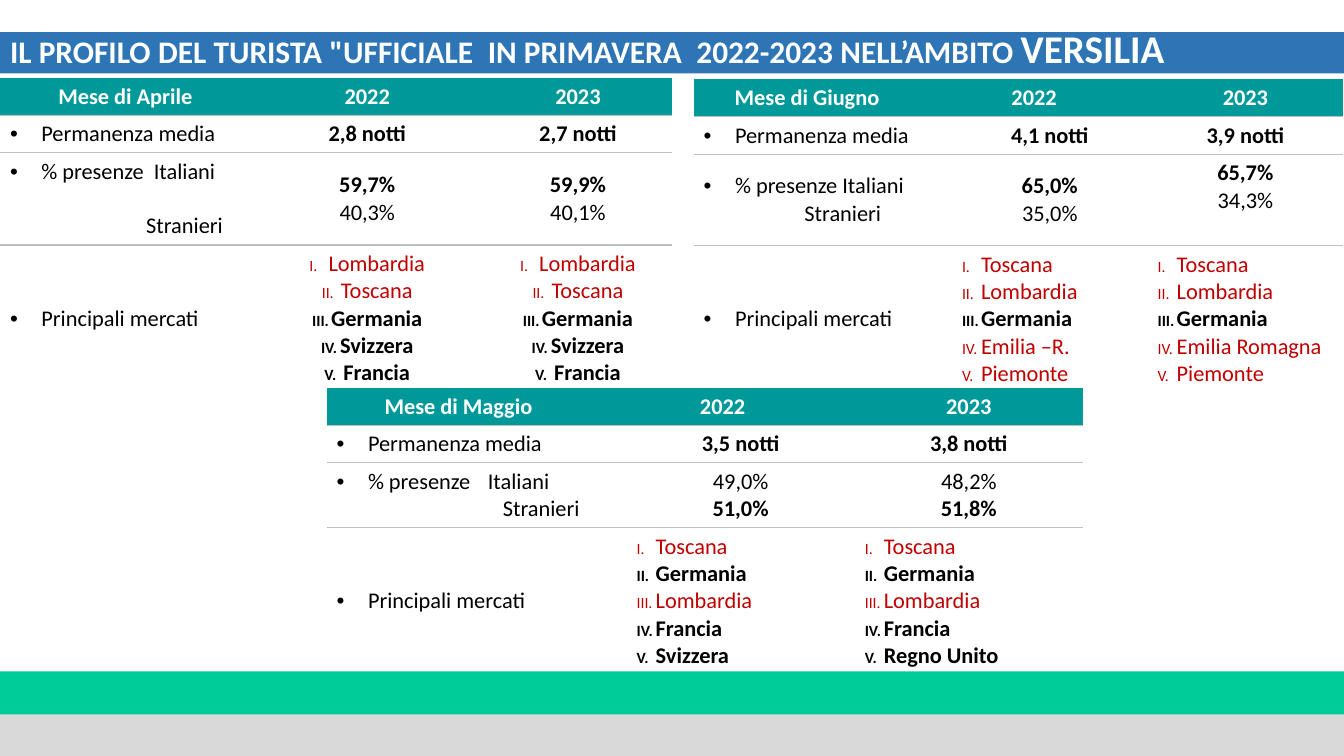
from lxml import etree
from pptx import Presentation
from pptx import util as u
from pptx.dml.color import RGBColor
from pptx.enum import shapes, text
from pptx.oxml import ns

WHITE = RGBColor(0xFF, 0xFF, 0xFF)
BLACK = RGBColor(0, 0, 0)
RED = RGBColor(0xC0, 0, 0)
TEAL = RGBColor(0, 0x99, 0x99)
GREEN = RGBColor(0, 0xCC, 0x99)
GREY = RGBColor(0xD9, 0xD9, 0xD9)
RULE = RGBColor(0xBF, 0xBF, 0xBF)
BLUE = RGBColor(0x2E, 0x75, 0xB6)
LEFT, MID = text.PP_ALIGN.LEFT, text.PP_ALIGN.CENTER
CENTRE, TOP = text.MSO_ANCHOR.MIDDLE, text.MSO_ANCHOR.TOP
PLAIN = "{2D5ABB26-0587-4C30-8999-92F81FD0307C}"

TITLE = "il profilo del turista \"ufficiale  in primavera  2022-2023 nell’ambito VERSILIA"
BANDS = [(16.92, 1.09, GREEN), (18.01, 1.04, GREY), (0.81, 1.04, BLUE)]
YEARS = ["2022", "2023"]
ABROAD = {"Germania", "Svizzera", "Francia", "Regno Unito"}
MONTHS = [
    dict(name="Aprile", at=(0, 1.96), cols=(6.32, 5.87, 4.75),
         rows=(0.93, 0.93, 2.28, 3.65), align=MID,
         label="% presenze  Italiani", indent=3.43, gap=19.5,
         anchors=(CENTRE, CENTRE), stays=("2,8", "2,7"),
         shares=(("59,7", "40,3"), ("59,9", "40,1")),
         markets=(("Lombardia", "Toscana", "Germania", "Svizzera", "Francia"),
                  ("Lombardia", "Toscana", "Germania", "Svizzera", "Francia"))),
    dict(name="Maggio", at=(8.23, 9.77), cols=(6.65, 0.91, 5.75, 5.75),
         rows=(0.93, 0.93, 1.63, 3.65), align=LEFT,
         label="% presenze \tItaliani", indent=4.19, gap=0,
         anchors=(CENTRE, CENTRE), stays=("3,5", "3,8"),
         shares=(("49,0", "51,0"), ("48,2", "51,8")),
         markets=(("Toscana", "Germania", "Lombardia", "Francia", "Svizzera"),
                  ("Toscana", "Germania", "Lombardia", "Francia", "Regno Unito"))),
    dict(name="Giugno", at=(17.48, 2), cols=(5.72, 0.79, 4.93, 4.93),
         rows=(0.93, 0.93, 2.3, 3.65), align=LEFT,
         label="% presenze Italiani", indent=2.54, gap=0,
         anchors=(CENTRE, TOP), stays=("4,1", "3,9"),
         shares=(("65,0", "35,0"), ("65,7", "34,3")),
         markets=(("Toscana", "Lombardia", "Germania", "Emilia –R.", "Piemonte"),
                  ("Toscana", "Lombardia", "Germania", "Emilia Romagna", "Piemonte"))),
]


def style(item, **vals):
    for key, val in vals.items():
        setattr(item, key, val)


def add(node, tag, **vals):
    return etree.SubElement(node, ns.qn(tag), vals)


def indent(para, left, hang=0):
    props = para._p.get_or_add_pPr()
    props.set("marL", str(u.Cm(left)))
    props.set("indent", str(-u.Cm(hang)))
    return props


def bullet(para, left, color, roman):
    props = indent(para, left, left)
    add(add(props, "a:buClr"), "a:srgbClr", val=str(color))
    if roman:
        add(props, "a:buSzPct", val="70000")
        add(props, "a:buFont", typeface="+mj-lt")
        add(props, "a:buAutoNum", type="romanUcPeriod")
    else:
        add(props, "a:buFont", typeface="Arial")
        add(props, "a:buChar", char="•")


def put(cell, lines, align=LEFT, color=BLACK, anchor=CENTRE):
    cell.vertical_anchor = anchor
    frame = cell.text_frame
    for i, (words, bold, *tint) in enumerate(lines):
        para = frame.paragraphs[0] if i == 0 else frame.add_paragraph()
        para.alignment = align
        run = para.add_run()
        run.text = words
        style(run.font, name="Calibri", size=u.Pt(16), bold=bold)
        run.font.color.rgb = tint[0] if tint else color
    return frame.paragraphs


def rule(cell):
    line = etree.Element(ns.qn("a:lnB"), w=str(u.Pt(0.96)))
    add(add(line, "a:solidFill"), "a:srgbClr", val=str(RULE))
    cell._tc.get_or_add_tcPr().insert(0, line)


def draw(slide, month):
    rows, cols = month["rows"], month["cols"]
    size = [u.Cm(sum(cols)), u.Cm(sum(rows))]
    frame = slide.shapes.add_table(len(rows), len(cols), *map(u.Cm, month["at"]), *size)
    grid = frame.table
    style(grid, first_row=False, horz_banding=False)
    grid._tbl.tblPr.find(ns.qn("a:tableStyleId")).text = PLAIN
    for col, width in zip(grid.columns, cols):
        col.width = u.Cm(width)
    for r, height in enumerate(rows):
        grid.rows[r].height = u.Cm(height)
        for c in range(len(cols)):
            cell = grid.cell(r, c)
            if r == 0:
                cell.fill.solid()
                cell.fill.fore_color.rgb = TEAL
            else:
                cell.fill.background()
            if r < len(rows) - 1:
                rule(cell)
        if len(cols) == 4:
            first = 1 if r == 0 else 0
            grid.cell(r, first).merge(grid.cell(r, first + 1))

    put(grid.cell(0, 0), [("Mese di " + month["name"], True)], MID, WHITE)
    labels = [["Permanenza media"], [month["label"], "Stranieri"], ["Principali mercati"]]
    for r, words in enumerate(labels, 1):
        paras = put(grid.cell(r, 0), [(word, False) for word in words])
        bullet(paras[0], 0.79, BLACK, False)
        if len(paras) > 1:
            indent(paras[1], month["indent"])
            paras[1].space_before = u.Pt(month["gap"])

    last = len(cols) - 1
    for i, year in enumerate(YEARS):
        c = last - 1 + i
        put(grid.cell(0, 1 if i == 0 else last), [(year, True)], MID, WHITE)
        put(grid.cell(1, c), [(month["stays"][i] + " notti", True)], MID)
        shares = [(part + "%", part > "50") for part in month["shares"][i]]
        put(grid.cell(2, c), shares, MID, anchor=month["anchors"][i])
        names = [(name, name in ABROAD, BLACK if name in ABROAD else RED)
                 for name in month["markets"][i]]
        paras = put(grid.cell(3, c), names, month["align"])
        for para, (_, _, tint) in zip(paras, names):
            bullet(para, 0.48, tint, True)


def main():
    deck = Presentation()
    style(deck, slide_width=u.Cm(33.87), slide_height=u.Cm(19.05))
    slide = deck.slides.add_slide(deck.slide_layouts[5])
    for top, height, color in BANDS:
        band = slide.shapes.add_shape(shapes.MSO_SHAPE.RECTANGLE, 0, u.Cm(top),
                                      deck.slide_width, u.Cm(height))
        band.shadow.inherit = False
        band.fill.solid()
        band.fill.fore_color.rgb = color
        band.line.fill.background()

    title = slide.shapes.title
    style(title, left=0, top=u.Cm(0.64), width=deck.slide_width, height=u.Cm(1.12))
    style(title.text_frame, text=TITLE, word_wrap=True, vertical_anchor=CENTRE,
          auto_size=text.MSO_AUTO_SIZE.NONE)
    para = title.text_frame.paragraphs[0]
    para.alignment = LEFT
    font = para.runs[0].font
    style(font, name="Calibri", size=u.Pt(28), bold=True)
    font.color.rgb = WHITE
    font._element.set("cap", "small")
    slide.shapes._spTree.append(title._element)

    for month in MONTHS:
        draw(slide, month)
    deck.save("out.pptx")


if __name__ == "__main__":
    main()
